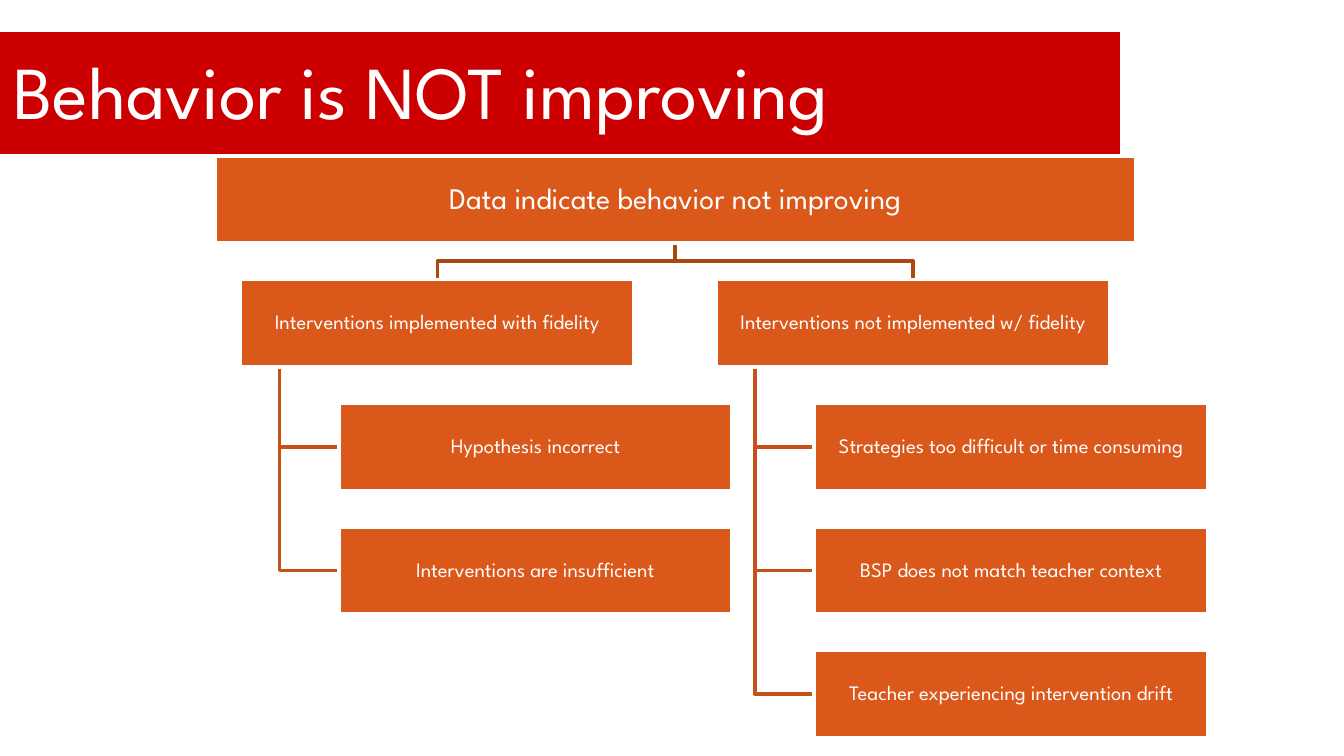
from dataclasses import dataclass

from pptx import Presentation
from pptx.dml.color import RGBColor
from pptx.enum.shapes import MSO_SHAPE
from pptx.enum.text import MSO_ANCHOR, PP_ALIGN
from pptx.util import Inches, Pt


@dataclass(frozen=True)
class Theme:
    """Colours, font and type sizes of the slide."""
    font: str = "League Spartan"
    white: RGBColor = RGBColor(0xFF, 0xFF, 0xFF)
    banner: RGBColor = RGBColor(0xCC, 0x00, 0x00)
    box: RGBColor = RGBColor(0xDB, 0x58, 0x1B)
    trunk: RGBColor = RGBColor(0xAD, 0x47, 0x14)
    branch: RGBColor = RGBColor(0xC5, 0x50, 0x18)
    title_size: float = 40
    root_size: float = 16
    node_size: float = 11
    line: float = 2.08
    banner_line: float = 0.75


THEME = Theme()
SLIDE_WIDTH = 10
SLIDE_HEIGHT = SLIDE_WIDTH * 9 / 16
ROOT = "Data indicate behavior not improving"
BRANCHES = [
    (1.79, "Interventions implemented with fidelity",
     ["Hypothesis incorrect", "Interventions are insufficient"]),
    (5.33, "Interventions not implemented w/ fidelity",
     ["Strategies too difficult or time consuming",
      "BSP does not match teacher context",
      "Teacher experiencing intervention drift"]),
]
ROOT_LEFT, ROOT_WIDTH = 1.6, 6.85
TOP, ROW_STEP = 1.16, 0.92
NODE_WIDTH, NODE_HEIGHT = 2.93, 0.65
STEM_INDENT, LEAF_INDENT = 0.29, 0.73


def row_top(row):
    """Return the top of a row of the tree."""
    return TOP + row * ROW_STEP


def set_text(sp, text, size, align, margins):
    """Put one formatted paragraph in a shape."""
    tf = sp.text_frame
    tf.text = text
    tf.word_wrap = True
    tf.vertical_anchor = MSO_ANCHOR.MIDDLE
    tf.margin_left = tf.margin_right = Inches(margins[0])
    tf.margin_top = tf.margin_bottom = Inches(margins[1])
    p = tf.paragraphs[0]
    p.alignment = align
    font = p.runs[0].font
    font.name = THEME.font
    font.size = Pt(size)
    font.color.rgb = THEME.white
    return p


def add_rect(s, left, top, width, height, fill, line_width):
    """Add a filled rectangle with a white outline."""
    sp = s.shapes.add_shape(MSO_SHAPE.RECTANGLE, Inches(left), Inches(top),
                            Inches(width), Inches(height))
    sp.shadow.inherit = False
    sp.fill.solid()
    sp.fill.fore_color.rgb = fill
    sp.line.color.rgb = THEME.white
    sp.line.width = Pt(line_width)
    return sp


def add_title(s, text):
    """Add the banner and the title over it."""
    add_rect(s, -0.08, 0.23, 8.42, 0.92, THEME.banner, THEME.banner_line)
    sp = s.shapes.add_textbox(Inches(0), Inches(0.26), Inches(8.33), Inches(0.81))
    set_text(sp, text, THEME.title_size, PP_ALIGN.LEFT, (0.1, 0.05))


def add_node(s, text, left, row, width=NODE_WIDTH, size=THEME.node_size):
    """Add a labelled box of the tree."""
    sp = add_rect(s, left, row_top(row), width, NODE_HEIGHT, THEME.box, THEME.line)
    p = set_text(sp, text, size, PP_ALIGN.CENTER, (0.01, 0.01))
    p.line_spacing = 0.9


def add_elbow(s, points, color):
    """Add an open bent line through the points."""
    start, *rest = [(Inches(x), Inches(y)) for x, y in points]
    builder = s.shapes.build_freeform(*start)
    builder.add_line_segments(rest, close=False)
    sp = builder.convert_to_shape()
    sp.shadow.inherit = False
    sp.fill.background()
    sp.line.color.rgb = color
    sp.line.width = Pt(THEME.line)


def add_branch_lines(s, left, leaves):
    """Link a branch to the root and to its leaves."""
    stem = left + STEM_INDENT
    for row, _ in enumerate(leaves, 2):
        middle = row_top(row) + NODE_HEIGHT / 2
        add_elbow(s, [(stem, row_top(1) + NODE_HEIGHT), (stem, middle),
                      (left + LEAF_INDENT, middle)], THEME.branch)
    root_x, node_x = ROOT_LEFT + ROOT_WIDTH / 2, left + NODE_WIDTH / 2
    start, end = row_top(0) + NODE_HEIGHT, row_top(1)
    bend = (start + end) / 2
    add_elbow(s, [(root_x, start), (root_x, bend), (node_x, bend),
                  (node_x, end)], THEME.trunk)


def add_tree(s):
    """Draw the links and then the boxes of the tree."""
    for left, _, leaves in BRANCHES:
        add_branch_lines(s, left, leaves)
    add_node(s, ROOT, ROOT_LEFT, 0, ROOT_WIDTH, THEME.root_size)
    for left, text, leaves in BRANCHES:
        add_node(s, text, left, 1)
        for row, leaf in enumerate(leaves, 2):
            add_node(s, leaf, left + LEAF_INDENT, row)


def main():
    """Build and save the slide."""
    prs = Presentation()
    prs.slide_width, prs.slide_height = Inches(SLIDE_WIDTH), Inches(SLIDE_HEIGHT)
    s = prs.slides.add_slide(prs.slide_layouts[6])
    add_title(s, "Behavior is NOT improving")
    add_tree(s)
    prs.save("out.pptx")


if __name__ == "__main__":
    main()
